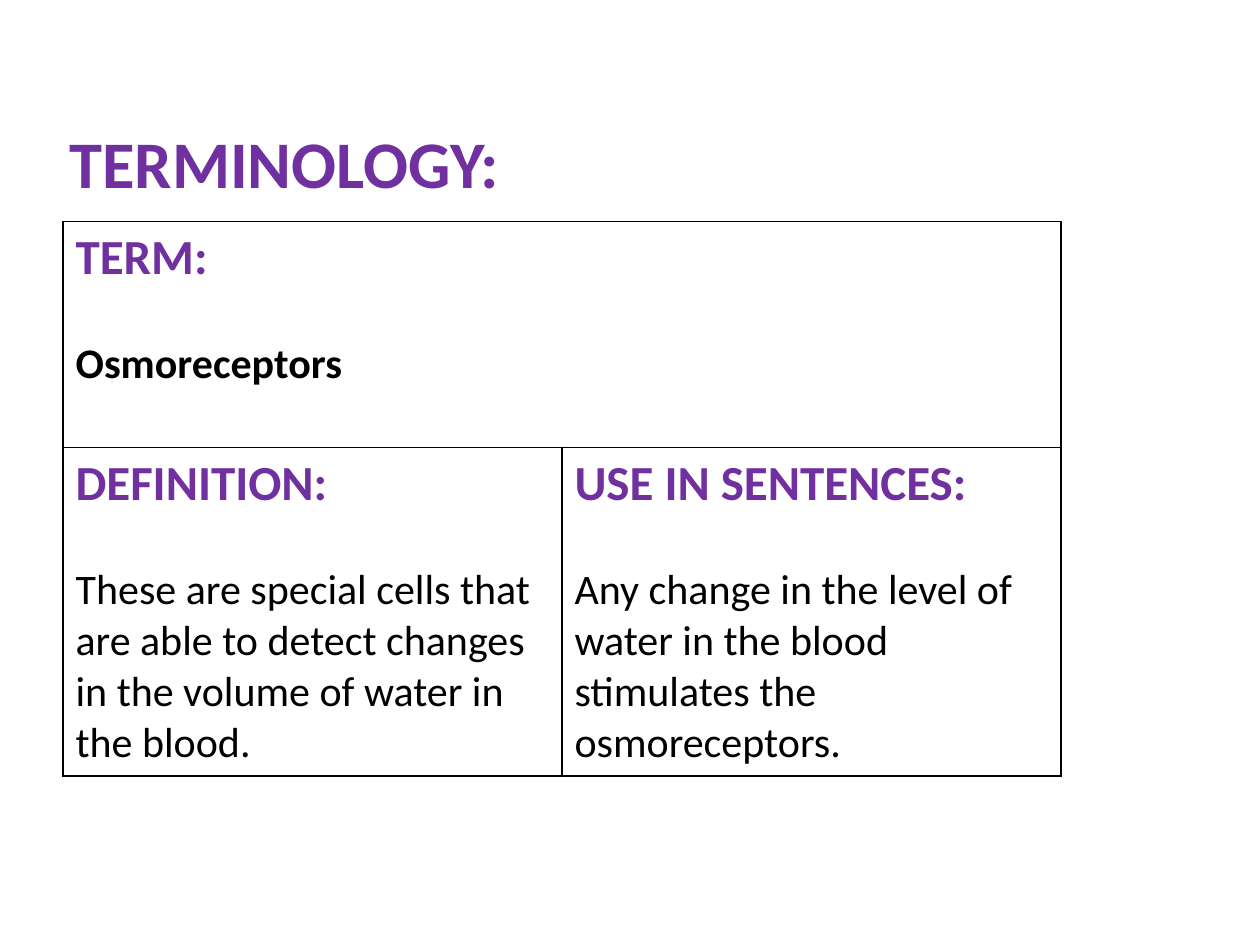
from lxml.etree import SubElement
from pptx import Presentation
from pptx.dml.color import RGBColor as Rgb
from pptx.enum.text import MSO_ANCHOR as Anchor, PP_ALIGN as Align
from pptx.oxml.ns import qn
from pptx.util import Inches, Pt

COLORS = {"head": "7030A0", "text": "000000", "line": "000000", "back": "FFFFFF"}
FONT = "Calibri"
TERM = ("TERM:", "Osmoreceptors")
PARTS = [
    ("DEFINITION:", "These are special cells that are able to detect changes "
                    "in the volume of water in the blood."),
    ("USE IN SENTENCES:", "Any change in the level of water in the blood "
                          "stimulates the osmoreceptors."),
]


def style(par, size, color, bold):
    """Format every run of a paragraph."""
    for run in par.runs:
        font = run.font
        font.name, font.size, font.bold = FONT, Pt(size), bold
        font.color.rgb = Rgb.from_string(COLORS[color])


def add_title(slide, text, left, top, width, height):
    """Place the title at the foot of its box."""
    title = slide.shapes.title
    title.left, title.top = Inches(left), Inches(top)
    title.width, title.height = Inches(width), Inches(height)
    frame = title.text_frame
    frame.text = text
    frame.word_wrap = True
    frame.vertical_anchor = Anchor.BOTTOM
    frame.margin_left = frame.margin_right = Inches(0.05)
    frame.margin_top = frame.margin_bottom = 0
    frame.paragraphs[0].alignment = Align.LEFT
    style(frame.paragraphs[0], 38, "head", True)


def add_edges(cell):
    """Fill a cell and draw a thin line on its four sides."""
    cell.fill.solid()
    cell.fill.fore_color.rgb = Rgb.from_string(COLORS["back"])
    props = cell._tc.get_or_add_tcPr()
    for spot, side in enumerate(("lnL", "lnR", "lnT", "lnB")):
        line = SubElement(props, qn(f"a:{side}"), w=str(Pt(1)))
        fill = SubElement(line, qn("a:solidFill"))
        SubElement(fill, qn("a:srgbClr"), val=COLORS["line"])
        props.insert(spot, line)


def fill_cell(cell, head, body, bold=False):
    """Write a heading with its text below it."""
    frame = cell.text_frame
    frame.text = head
    style(frame.paragraphs[0], 28, "head", True)
    par = frame.add_paragraph()
    par.text = body
    par.space_before = Pt(29)
    style(par, 24, "text", bold)


def add_card(slide, left, top, width, rows):
    """Place the term table: one wide cell over two halves."""
    table = slide.shapes.add_table(
        2, 2, Inches(left), Inches(top), Inches(width), Inches(sum(rows))).table
    table.first_row = table.horz_banding = False
    for row, height in zip(table.rows, rows):
        row.height = Inches(height)
    for col in table.columns:
        col.width = Inches(width / 2)
    for cell in table.iter_cells():
        add_edges(cell)
    table.cell(0, 0).merge(table.cell(0, 1))
    fill_cell(table.cell(0, 0), *TERM, bold=True)
    for col, part in enumerate(PARTS):
        fill_cell(table.cell(1, col), *part)


def main():
    """Build and save the slide."""
    deck = Presentation()
    deck.slide_width, deck.slide_height = Inches(10), Inches(7.5)
    slide = deck.slides.add_slide(deck.slide_layouts[5])
    add_title(slide, "TERMINOLOGY:", 0.5, 0.35, 7.92, 1.25)
    add_card(slide, 0.5, 1.76, 7.92, (1.79, 2.61))
    deck.save("out.pptx")


if __name__ == "__main__":
    main()
